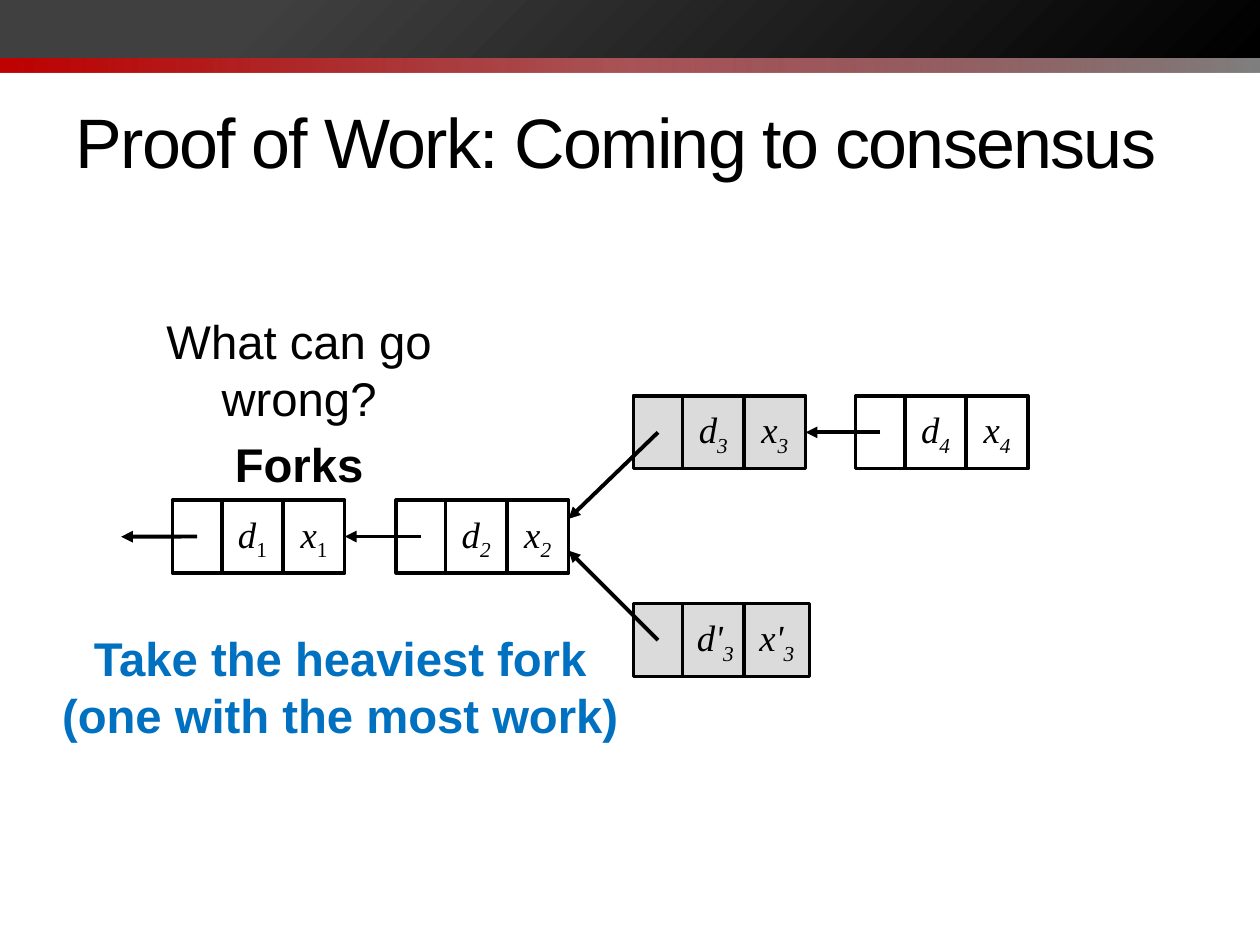
"""Build a slide on forks in a proof-of-work block chain."""
import pptx
import pptx.dml.color
import pptx.enum.shapes
import pptx.enum.text
import pptx.oxml
import pptx.oxml.ns
import pptx.util
from pptx.util import Cm

COLOURS = {"black": "000000", "white": "FFFFFF", "grey": "DBDBDB", "blue": "0070C0"}
TITLE = "Proof of Work: Coming to consensus"
QUESTION = [("What can go wrong?", False), ("Forks", True)]
ANSWER = [("Take the heaviest fork", True), ("(one with the most work)", True)]
BANDS = [
    (0.61, 0.86, 0, [(0, "C00000", 100), (50, "7F0007", 67), (100, "808080", 100)]),
    (0, 1.17, 225, [(0, "000000", 100), (80, "404040", 100), (100, "404040", 100)]),
]
BLOCKS = [
    {"left": 3.48, "top": 10.08, "mark": "", "index": "1", "fill": "white",
     "grouped": True, "arrow": (2.44, 10.82), "upright": True},
    {"left": 7.99, "top": 10.08, "mark": "", "index": "2", "fill": "white",
     "grouped": True, "parent": 0},
    {"left": 12.77, "top": 7.98, "mark": "", "index": "3", "fill": "grey",
     "arrow": (11.46, 10.46)},
    {"left": 12.77, "top": 12.17, "mark": "'", "index": "3", "fill": "grey",
     "arrow": (11.46, 11.1)},
    {"left": 17.25, "top": 7.98, "mark": "", "index": "4", "fill": "white",
     "grouped": True, "parent": 2},
]
POINTER_WIDTH, CELL_STEP, PRIME_WIDTH, BLOCK_HEIGHT = 0.99, 1.24, 1.32, 1.47
RECTANGLE = pptx.enum.shapes.MSO_SHAPE.RECTANGLE
CENTER = pptx.enum.text.PP_ALIGN.CENTER


def rgb(name):
    return pptx.dml.color.RGBColor.from_string(COLOURS[name])


def place(shape, left, top, width, height):
    shape.left, shape.top, shape.width, shape.height = map(Cm, (left, top, width, height))


def add_run(paragraph, text, size, colour="black", name="Arial", bold=False, italic=False):
    run = paragraph.add_run()
    run.text = text
    font = run.font
    font.size, font.name, font.bold, font.italic = pptx.util.Pt(size), name, bold, italic
    font.color.rgb = rgb(colour)
    return run


def add_lines(frame, lines, colour):
    for number, (text, bold) in enumerate(lines):
        paragraph = frame.add_paragraph() if number else frame.paragraphs[0]
        paragraph.alignment = CENTER
        add_run(paragraph, text, 27, colour, bold=bold)
    return frame.paragraphs


def add_band(shapes, top, height, angle, stops):
    band = shapes.add_shape(RECTANGLE, 0, Cm(top), Cm(25.4), Cm(height))
    band.shadow.inherit = False
    band.line.fill.background()
    stop_xml = "".join(
        f'<a:gs pos="{position * 1000}"><a:srgbClr val="{colour}">'
        f'<a:alpha val="{alpha * 1000}"/></a:srgbClr></a:gs>'
        for position, colour, alpha in stops)
    gradient = pptx.oxml.parse_xml(
        f'<a:gradFill {pptx.oxml.ns.nsdecls("a")} rotWithShape="1"><a:gsLst>{stop_xml}</a:gsLst>'
        f'<a:lin ang="{angle * 60000}" scaled="0"/></a:gradFill>')
    band.fill.gradient()
    old = band.element.spPr.find(pptx.oxml.ns.qn("a:gradFill"))
    band.element.spPr.replace(old, gradient)


def add_cell(shapes, left, top, width, fill, letter="", index="", upright=False):
    cell = shapes.add_shape(RECTANGLE, Cm(left), Cm(top), Cm(width), Cm(BLOCK_HEIGHT))
    cell.shadow.inherit = False
    cell.fill.solid()
    cell.fill.fore_color.rgb = rgb(fill)
    cell.line.color.rgb = rgb("black")
    cell.line.width = pptx.util.Pt(2.08)
    if letter:
        frame = cell.text_frame
        frame.margin_left = frame.margin_right = 0
        frame.vertical_anchor = pptx.enum.text.MSO_ANCHOR.MIDDLE
        paragraph = frame.paragraphs[0]
        paragraph.alignment = CENTER
        add_run(paragraph, letter, 21, name="Times New Roman", italic=True)
        subscript = add_run(paragraph, index, 21, name="Times New Roman", italic=not upright)
        subscript.font._element.set("baseline", "-25000")
    return cell


def add_arrow(shapes, start, end):
    arrow = shapes.add_connector(
        pptx.enum.shapes.MSO_CONNECTOR.STRAIGHT, *map(Cm, start + end))
    arrow.line.color.rgb = rgb("black")
    arrow.line.width = pptx.util.Pt(2.25)
    line = arrow.line._get_or_add_ln()
    line.append(pptx.oxml.parse_xml(
        f'<a:tailEnd {pptx.oxml.ns.nsdecls("a")} type="triangle"/>'))
    arrow._element.spPr.append(pptx.oxml.parse_xml(
        f'<a:effectLst {pptx.oxml.ns.nsdecls("a")}/>'))
    return arrow


def add_block(slide, block, last_cells):
    shapes = slide.shapes.add_group_shape().shapes if block.get("grouped") else slide.shapes
    left, top, fill, mark = (block[key] for key in ("left", "top", "fill", "mark"))
    add_cell(shapes, left, top, POINTER_WIDTH, fill)
    start = (left + POINTER_WIDTH / 2, top + BLOCK_HEIGHT / 2)
    if "parent" in block:
        parent = BLOCKS[block["parent"]]
        end = (parent["left"] + POINTER_WIDTH + 2 * CELL_STEP, start[1])
        add_arrow(shapes, start, end).end_connect(last_cells[block["parent"]], 3)
    else:
        add_arrow(shapes, start, block["arrow"])
    width = PRIME_WIDTH if mark else CELL_STEP
    for column, letter in enumerate("dx"):
        cell = add_cell(shapes, left + POINTER_WIDTH + column * CELL_STEP, top, width, fill,
                        letter + mark, block["index"], block.get("upright", False))
    return cell


def main():
    presentation = pptx.Presentation()
    presentation.slide_width, presentation.slide_height = Cm(25.4), Cm(19.05)
    slide = presentation.slides.add_slide(presentation.slide_layouts[1])

    title, body = slide.placeholders
    place(title, 1.27, 1.47, 22.86, 2.74)
    title.text_frame.auto_size = pptx.enum.text.MSO_AUTO_SIZE.NONE
    title.text_frame.vertical_anchor = pptx.enum.text.MSO_ANCHOR.MIDDLE
    heading = title.text_frame.paragraphs[0]
    heading.alignment = pptx.enum.text.PP_ALIGN.LEFT
    add_run(heading, TITLE, 40).font._element.set("spc", "-100")

    place(body, 1.75, 6.17, 8.56, 9.07)
    body.text_frame.auto_size = pptx.enum.text.MSO_AUTO_SIZE.NONE
    for paragraph in add_lines(body.text_frame, QUESTION, "black"):
        properties = paragraph._element.get_or_add_pPr()
        properties.set("marL", "0")
        properties.set("indent", "0")
        properties.append(pptx.oxml.parse_xml(f'<a:buNone {pptx.oxml.ns.nsdecls("a")}/>'))

    for band in BANDS:
        add_band(slide.shapes, *band)
    last_cells = []
    for block in BLOCKS:
        last_cells.append(add_block(slide, block, last_cells))

    answer = slide.shapes.add_textbox(Cm(0.94), Cm(12.57), Cm(11.84), Cm(2.57))
    answer.text_frame.word_wrap = False
    answer.text_frame.auto_size = pptx.enum.text.MSO_AUTO_SIZE.SHAPE_TO_FIT_TEXT
    add_lines(answer.text_frame, ANSWER, "blue")
    presentation.save("out.pptx")


if __name__ == "__main__":
    main()
